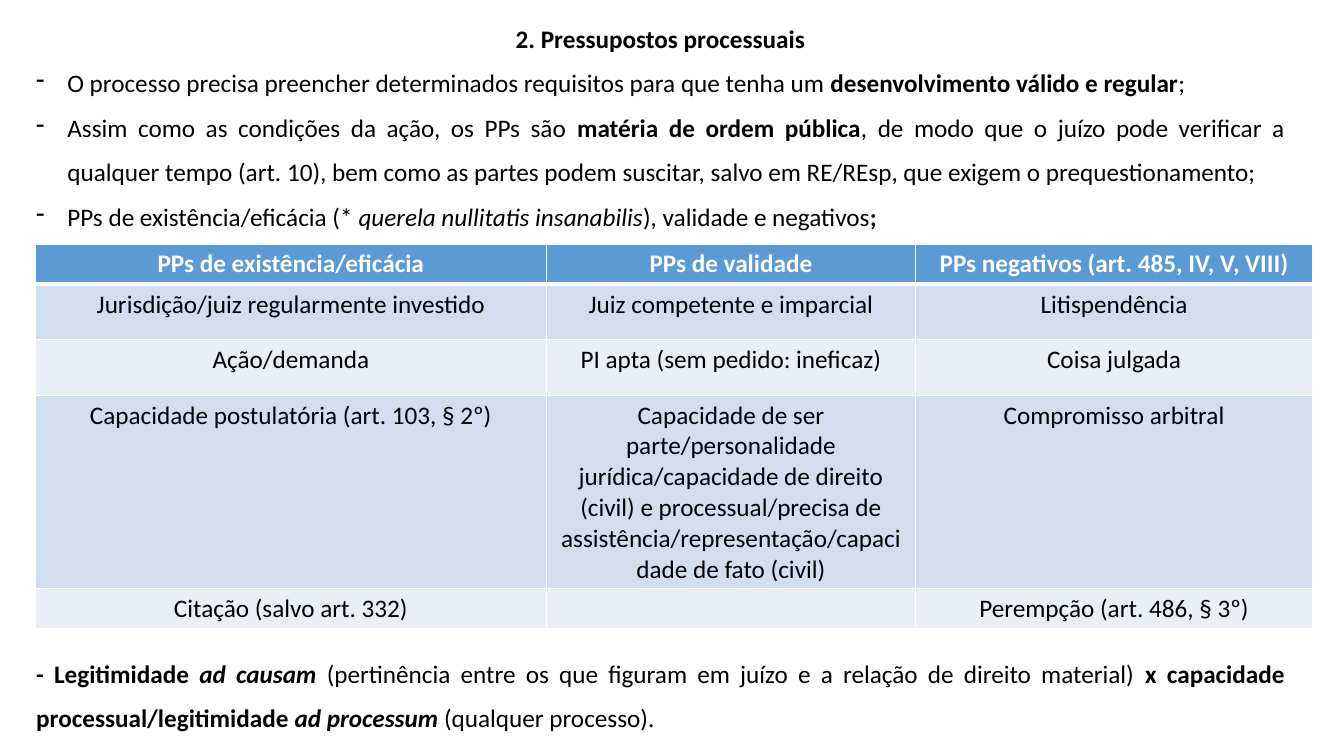
import pptx
import pptx.dml.color
import pptx.enum.text
import pptx.oxml
import pptx.oxml.ns
import pptx.util

RGBColor = pptx.dml.color.RGBColor
ALIGN = pptx.enum.text.PP_ALIGN

BLACK = RGBColor(0x00, 0x00, 0x00)
WHITE = RGBColor(0xFF, 0xFF, 0xFF)
HEADER_BLUE = RGBColor(0x5B, 0x9B, 0xD5)
BANDS = (RGBColor(0xD2, 0xDE, 0xEF), RGBColor(0xEA, 0xEF, 0xF7))

BOLD = {"bold": True}
ITALIC = {"italic": True}
BOLD_ITALIC = {"bold": True, "italic": True}
PLAIN = {}

INTRO = [
    {"align": ALIGN.CENTER, "spans": [("2. Pressupostos processuais", BOLD)]},
    {"bullet": True, "spans": [
        ("O processo precisa preencher determinados requisitos para que tenha um ", PLAIN),
        ("desenvolvimento válido e regular", BOLD),
        (";", PLAIN)]},
    {"bullet": True, "spans": [
        ("Assim como as condições da ação, os PPs são ", PLAIN),
        ("matéria de ordem pública", BOLD),
        (", de modo que o juízo pode verificar a qualquer tempo (art. 10), bem como as "
         "partes podem suscitar, salvo em RE/REsp, que exigem o prequestionamento;", PLAIN)]},
    {"bullet": True, "spans": [
        ("PPs de existência/eficácia (* ", PLAIN),
        ("querela nullitatis insanabilis", ITALIC),
        ("), validade e negativos", PLAIN),
        (";", BOLD)]},
]
LEGITIMACY = [
    {"spans": [
        ("- Legitimidade ", BOLD),
        ("ad causam ", BOLD_ITALIC),
        ("(pertinência entre os que figuram em juízo e a relação de direito material) ", PLAIN),
        ("x capacidade processual/legitimidade ", BOLD),
        ("ad processum ", BOLD_ITALIC),
        ("(qualquer processo).", PLAIN)]},
]
REQUIREMENTS = [
    ["PPs de existência/eficácia", "PPs de validade", "PPs negativos (art. 485, IV, V, VIII)"],
    ["Jurisdição/juiz regularmente investido", "Juiz competente e imparcial", "Litispendência"],
    ["Ação/demanda", "PI apta (sem pedido: ineficaz)", "Coisa julgada"],
    ["Capacidade postulatória (art. 103, § 2º)",
     "Capacidade de ser parte/personalidade jurídica/capacidade de direito (civil) e "
     "processual/precisa de assistência/representação/capacidade de fato (civil)",
     "Compromisso arbitral"],
    ["Citação (salvo art. 332)", "", "Perempção (art. 486, § 3º)"],
]


class SlideBuilder:
    """Holds the text style and the current slide; lengths are in px, 100 to the inch."""

    scale = 9144
    style = {"name": "Calibri", "size": pptx.util.Pt(18), "bold": False, "italic": False}
    line_spacing = 1.47
    indent = 31

    def __init__(self, page):
        self.page = page

    def emu(self, *lengths):
        return [length * self.scale for length in lengths]

    def add_span(self, para, text, color=BLACK, **changes):
        span = para.add_run()
        span.text = text
        for key, value in {**self.style, **changes}.items():
            setattr(span.font, key, value)
        span.font.color.rgb = color

    def add_bullet(self, para):
        properties = para._p.get_or_add_pPr()
        margin, = self.emu(self.indent)
        properties.set("marL", str(margin))
        properties.set("indent", str(-margin))
        bullet = pptx.oxml.parse_xml(
            f'<a:buChar {pptx.oxml.ns.nsdecls("a")} char="-"/>')
        properties.append(bullet)

    def text(self, left, top, width, height, paragraphs):
        box = self.page.shapes.add_textbox(*self.emu(left, top, width, height))
        frame = box.text_frame
        frame.word_wrap = True
        for index, content in enumerate(paragraphs):
            para = frame.add_paragraph() if index else frame.paragraphs[0]
            if content.get("bullet"):
                self.add_bullet(para)
            para.alignment = content.get("align", ALIGN.JUSTIFY)
            para.line_spacing = self.line_spacing
            for words, changes in content["spans"]:
                self.add_span(para, words, **changes)

    def add_borders(self, cell, widths):
        properties = cell._tc.get_or_add_tcPr()
        for index, (side, points) in enumerate(widths.items()):
            border = pptx.oxml.parse_xml(
                f'<a:ln{side} {pptx.oxml.ns.nsdecls("a")} w="{pptx.util.Pt(points)}">'
                f'<a:solidFill><a:srgbClr val="{WHITE}"/></a:solidFill></a:ln{side}>')
            properties.insert(index, border)

    def table(self, left, top, columns, heights, rows):
        frame = self.page.shapes.add_table(
            len(rows), len(columns), *self.emu(left, top, sum(columns), sum(heights)))
        table = frame.table
        for column, width in zip(table.columns, self.emu(*columns)):
            column.width = width
        for row, height in zip(table.rows, self.emu(*heights)):
            row.height = height
        for row_index, texts in enumerate(rows):
            header = row_index == 0
            fill = HEADER_BLUE if header else BANDS[(row_index - 1) % 2]
            widths = {"L": 1, "R": 1, "T": 3 if row_index == 1 else 1, "B": 3 if header else 1}
            for column_index, words in enumerate(texts):
                cell = table.cell(row_index, column_index)
                cell.fill.solid()
                cell.fill.fore_color.rgb = fill
                self.add_borders(cell, widths)
                para = cell.text_frame.paragraphs[0]
                para.alignment = ALIGN.CENTER
                if words:
                    self.add_span(para, words, WHITE if header else BLACK, bold=header)


def main():
    deck = pptx.Presentation()
    deck.slide_width, deck.slide_height = 1333 * SlideBuilder.scale, 750 * SlideBuilder.scale
    builder = SlideBuilder(deck.slides.add_slide(deck.slide_layouts[6]))

    # Title and introductory points
    builder.text(26, 4, 1258, 235, INTRO)

    # Table of procedural requirements
    builder.table(35, 242, (507, 366, 394), (40, 55, 55, 192, 40), REQUIREMENTS)

    # Closing distinction
    builder.text(26, 634, 1258, 100, LEGITIMACY)

    deck.save("out.pptx")


if __name__ == "__main__":
    main()
